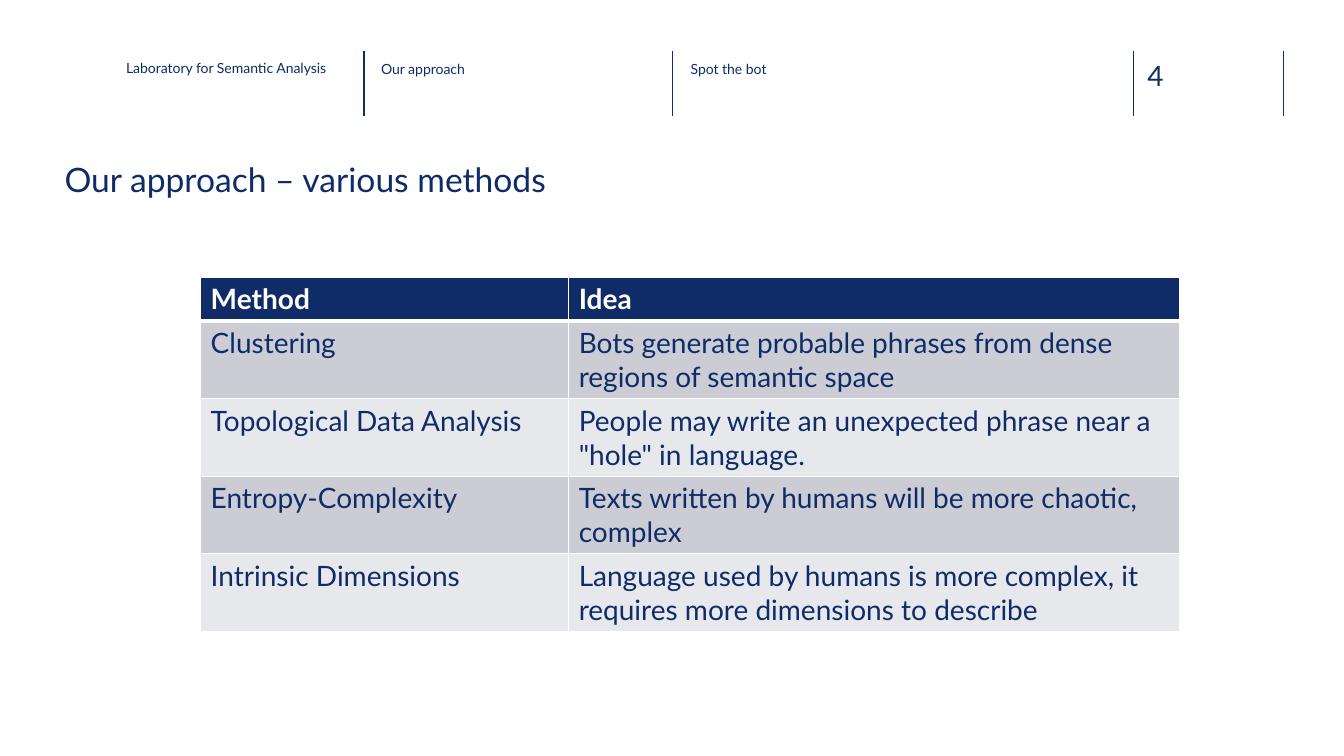
"""Build the slide that lists the methods of the approach in a table."""
from dataclasses import dataclass

from lxml import etree
from pptx import Presentation
from pptx.dml.color import RGBColor
from pptx.enum.shapes import MSO_CONNECTOR
from pptx.enum.text import MSO_ANCHOR, PP_ALIGN
from pptx.oxml.ns import qn
from pptx.slide import Slide
from pptx.table import _Cell
from pptx.text.text import TextFrame
from pptx.util import Inches, Pt

LINE = MSO_CONNECTOR.STRAIGHT
TOP = MSO_ANCHOR.TOP
LEFT = PP_ALIGN.LEFT


@dataclass(frozen=True)
class Theme:
    """Colours, font and type sizes."""
    font: str = "Lato"
    navy: str = "0F2C68"
    rule: str = "102D69"
    label: str = "0E2D69"
    white: str = "FFFFFF"
    bands: tuple[str, str] = ("CCCDD4", "E7E8EB")
    small: int = 10
    body: int = 20
    title: int = 24


@dataclass(frozen=True)
class Label:
    """A text in the head of the slide."""
    text: str
    left: float
    top: float
    width: float
    height: float
    size: int
    color: str


THEME = Theme()
RULES = (3.61, 6.67, 11.24, 12.73)
LABELS = (
    Label("Laboratory for Semantic Analysis", 1.25, 0.59, 2.08, 0.45, THEME.small, THEME.navy),
    Label("Our approach", 3.78, 0.6, 2.26, 0.45, THEME.small, THEME.label),
    Label("Spot the bot", 6.85, 0.6, 2.26, 0.45, THEME.small, THEME.label),
    Label("4", 11.38, 0.58, 0.73, 0.34, THEME.body, THEME.rule),
)
ROWS = (
    ("Method", "Idea"),
    ("Clustering", "Bots generate probable phrases from dense regions of semantic space"),
    ("Topological Data Analysis", 'People may write an unexpected phrase near a "hole" in language.'),
    ("Entropy-Complexity", "Texts written by humans will be more chaotic, complex"),
    ("Intrinsic Dimensions", "Language used by humans is more complex, it requires more dimensions to describe"),
)
COLS = (3.65, 6.06)
HEAD, ROW = 0.43, 0.77


def write(frame: TextFrame, text: str, size: int, color: str, bold: bool = False) -> None:
    """Set the text of a frame and its font."""
    frame.text = text
    para = frame.paragraphs[0]
    para.alignment = LEFT
    font = para.font
    font.name, font.size, font.bold = THEME.font, Pt(size), bold
    font.color.rgb = RGBColor.from_string(color)


def bare(frame: TextFrame) -> None:
    """Wrap a frame at the top with no insets."""
    frame.word_wrap = True
    frame.vertical_anchor = TOP
    frame.margin_left = frame.margin_right = frame.margin_top = frame.margin_bottom = 0


def add_title(slide: Slide, text: str) -> None:
    """Place and fill the title."""
    title = slide.shapes.title
    title.left, title.top = Inches(0.64), Inches(1.58)
    title.width, title.height = Inches(12.09), Inches(0.85)
    bare(title.text_frame)
    write(title.text_frame, text, THEME.title, THEME.navy)


def add_rule(slide: Slide, x: float) -> None:
    """Draw an upright rule in the head."""
    rule = slide.shapes.add_connector(LINE, Inches(x), Inches(0.51), Inches(x), Inches(1.15))
    rule.line.width = Pt(1)
    rule.line.color.rgb = RGBColor.from_string(THEME.rule)
    etree.SubElement(rule._element.spPr, qn("a:effectLst"))


def add_label(slide: Slide, label: Label) -> None:
    """Add a head text."""
    box = slide.shapes.add_textbox(
        Inches(label.left), Inches(label.top), Inches(label.width), Inches(label.height))
    bare(box.text_frame)
    write(box.text_frame, label.text, label.size, label.color)


def add_edge(cell: _Cell, side: str, width: int) -> None:
    """Add a white border on one side of a cell."""
    edge = etree.SubElement(cell._tc.get_or_add_tcPr(), qn(f"a:ln{side}"), w=str(Pt(width)))
    fill = etree.SubElement(edge, qn("a:solidFill"))
    etree.SubElement(fill, qn("a:srgbClr"), val=THEME.white)


def add_grid(slide: Slide) -> None:
    """Add the table of methods."""
    high = HEAD + ROW * (len(ROWS) - 1)
    grid = slide.shapes.add_table(
        len(ROWS), len(COLS), Inches(1.99), Inches(2.75), Inches(sum(COLS)), Inches(high)).table
    for col, width in zip(grid.columns, COLS):
        col.width = Inches(width)
    for r, texts in enumerate(ROWS):
        head = r == 0
        grid.rows[r].height = Inches(HEAD if head else ROW)
        edges = {"L": 1, "R": 1, "T": 3 if r == 1 else 1, "B": 3 if head else 1}
        for c, text in enumerate(texts):
            cell = grid.cell(r, c)
            for side, width in edges.items():
                add_edge(cell, side, width)
            cell.fill.solid()
            shade = THEME.navy if head else THEME.bands[(r - 1) % 2]
            cell.fill.fore_color.rgb = RGBColor.from_string(shade)
            write(cell.text_frame, text, THEME.body, THEME.white if head else THEME.navy, head)


def main() -> None:
    """Build and save the slide."""
    deck = Presentation()
    deck.slide_width, deck.slide_height = Inches(13.33), Inches(7.5)
    slide = deck.slides.add_slide(deck.slide_layouts[5])
    for x in RULES:
        add_rule(slide, x)
    add_title(slide, "Our approach – various methods")
    for label in LABELS:
        add_label(slide, label)
    add_grid(slide)
    deck.save("out.pptx")


if __name__ == "__main__":
    main()
